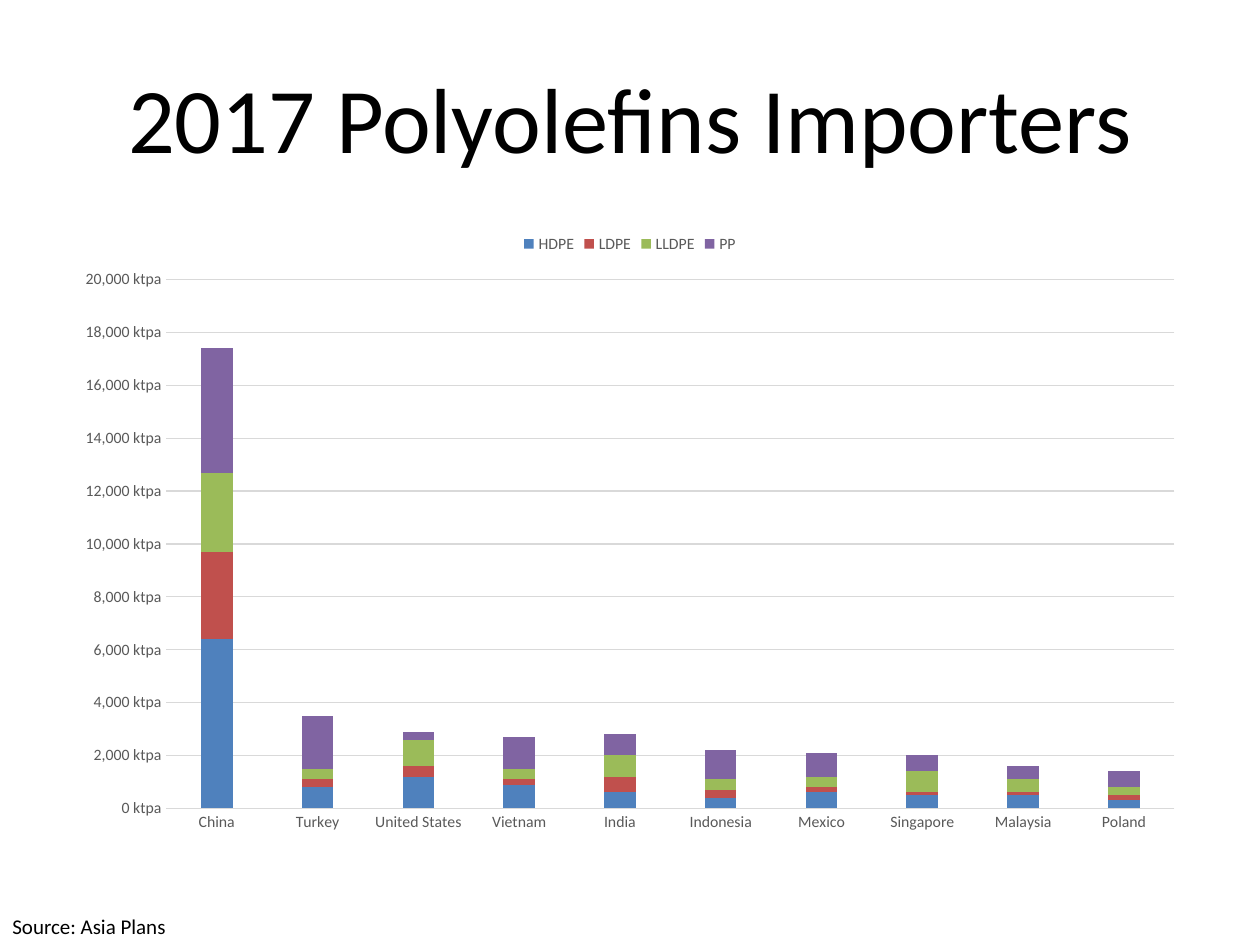
import dataclasses
import typing

import pptx
import pptx.chart.data
import pptx.dml.color
import pptx.enum.chart
import pptx.enum.text
import pptx.util

Inches = pptx.util.Inches
Pt = pptx.util.Pt
RGB = pptx.dml.color.RGBColor.from_string


@dataclasses.dataclass(frozen=True)
class Theme:
    face: str = "Calibri"
    ink: str = "000000"
    label: str = "595959"
    rule: str = "D9D9D9"
    title_size: float = 52.8
    note_size: float = 12
    chart_size: float = 10
    label_size: float = 9
    line: float = 0.75


class Box(typing.NamedTuple):
    left: float
    top: float
    width: float
    height: float


class Series(typing.NamedTuple):
    name: str
    color: str
    values: tuple[int, ...]


THEME = Theme()
NATIONS = ("China", "Turkey", "United States", "Vietnam", "India",
           "Indonesia", "Mexico", "Singapore", "Malaysia", "Poland")
SERIES = (
    Series("HDPE", "4F81BD", (6400, 800, 1200, 900, 600, 400, 600, 500, 500, 300)),
    Series("LDPE", "C0504D", (3300, 300, 400, 200, 600, 300, 200, 100, 100, 200)),
    Series("LLDPE", "9BBB59", (3000, 400, 1000, 400, 800, 400, 400, 800, 500, 300)),
    Series("PP", "8064A2", (4700, 2000, 300, 1200, 800, 1100, 900, 600, 500, 600)),
)


def apply(target: typing.Any, values: dict[str, typing.Any]) -> None:
    for name, value in values.items():
        setattr(target, name, value)


def place(box: Box) -> dict[str, int]:
    return {name: Inches(value) for name, value in box._asdict().items()}


def style(font: typing.Any, size: float, color: str) -> None:
    apply(font, {"name": THEME.face, "size": Pt(size), "bold": False})
    font.color.rgb = RGB(color)


def rule(line: typing.Any) -> None:
    line.color.rgb = RGB(THEME.rule)
    line.width = Pt(THEME.line)


def write(shape: typing.Any, text: str, size: float, frame: dict[str, typing.Any],
          align: typing.Any) -> None:
    apply(shape.text_frame, frame)
    line = shape.text_frame.paragraphs[0]
    line.text = text
    line.alignment = align
    style(line.runs[0].font, size, THEME.ink)


def draw_chart(slide: typing.Any, box: Box) -> None:
    kinds = pptx.enum.chart
    data = pptx.chart.data.CategoryChartData(number_format="#,##0")
    data.categories = NATIONS
    for item in SERIES:
        data.add_series(item.name, item.values)
    chart = slide.shapes.add_chart(
        kinds.XL_CHART_TYPE.COLUMN_STACKED, *place(box).values(), data).chart
    style(chart.font, THEME.chart_size, THEME.ink)
    apply(chart, {"has_title": False, "has_legend": True})

    # Legend above the plot
    apply(chart.legend, {"position": kinds.XL_LEGEND_POSITION.TOP,
                         "include_in_layout": False})
    style(chart.legend.font, THEME.label_size, THEME.label)

    # Stacked columns
    plot = chart.plots[0]
    apply(plot, {"gap_width": 219, "overlap": 100, "vary_by_categories": False})
    for item, bars in zip(SERIES, plot.series):
        bars.invert_if_negative = False
        bars.format.fill.solid()
        bars.format.fill.fore_color.rgb = RGB(item.color)

    # Axes
    nations, volume = chart.category_axis, chart.value_axis
    for axis in (nations, volume):
        apply(axis, {"major_tick_mark": kinds.XL_TICK_MARK.NONE,
                     "minor_tick_mark": kinds.XL_TICK_MARK.NONE})
        style(axis.tick_labels.font, THEME.label_size, THEME.label)
    rule(nations.format.line)
    apply(volume, {"minimum_scale": 0, "maximum_scale": 20000,
                   "major_unit": 2000, "has_major_gridlines": True})
    apply(volume.tick_labels, {"number_format": r"#,##0\ \k\t\p\a",
                               "number_format_is_linked": False})
    rule(volume.major_gridlines.format.line)
    volume.format.line.fill.background()


def main() -> None:
    deck = pptx.Presentation()
    apply(deck, {"slide_width": Inches(10), "slide_height": Inches(7.5)})
    slide = deck.slides.add_slide(deck.slide_layouts[5])
    texts = pptx.enum.text

    # Title
    title = slide.shapes.title
    apply(title, place(Box(0.5, 0.3, 9, 1.25)))
    write(title, "2017 Polyolefins Importers", THEME.title_size,
          {"vertical_anchor": texts.MSO_ANCHOR.MIDDLE, "word_wrap": True,
           "auto_size": texts.MSO_AUTO_SIZE.NONE}, texts.PP_ALIGN.CENTER)

    # Source line
    note = slide.shapes.add_textbox(**place(Box(0, 7.2, 8.06, 0.3)))
    write(note, "Source: Asia Plans", THEME.note_size,
          {"word_wrap": True, "auto_size": texts.MSO_AUTO_SIZE.SHAPE_TO_FIT_TEXT},
          texts.PP_ALIGN.LEFT)

    # Imports by nation
    draw_chart(slide, Box(0.5, 1.75, 9, 4.95))
    deck.save("out.pptx")


if __name__ == "__main__":
    main()
